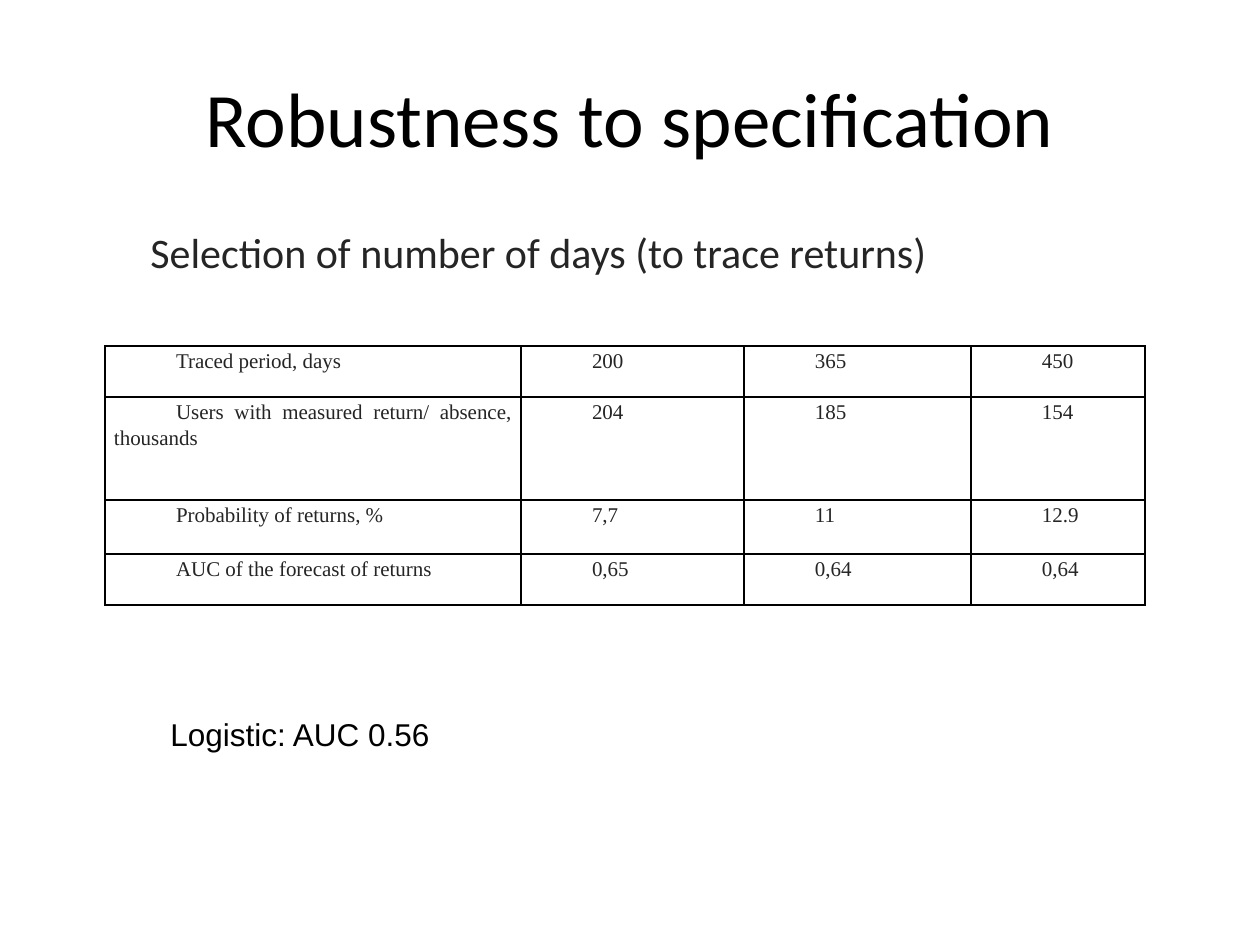
from dataclasses import dataclass

from lxml.etree import SubElement as Sub
from pptx import Presentation
from pptx.dml.color import RGBColor as RGB
from pptx.enum.text import MSO_ANCHOR as Anchor, MSO_AUTO_SIZE as Auto, PP_ALIGN as Align
from pptx.oxml.ns import qn
from pptx.util import Emu, Pt

SCALE = 914400 / 126
INDENT = 62
INSET = 9
COLORS = {"black": "000000", "gray": "252525"}


@dataclass
class Style:
    font: str
    size: int
    color: str
    align: Align = Align.LEFT
    indent: int = INDENT
    space: float = 1.0


@dataclass
class Label:
    text: str
    box: tuple[int, int, int, int]
    style: Style
    wrap: bool = False
    auto: Auto = Auto.SHAPE_TO_FIT_TEXT


LABELS = [
    Label("Robustness to specification", (63, 38, 1134, 158),
          Style("Calibri", 44, "black", Align.CENTER, 0), True, Auto.NONE),
    Label("Selection of number of days (to trace returns)", (76, 220, 872, 63),
          Style("Calibri", 24, "gray")),
    Label("Logistic: AUC 0.56", (96, 709, 350, 50), Style("Arial", 18, "black")),
]

# Table content and grid
CELL = Style("Times New Roman", 12, "gray", Align.JUSTIFY, space=1.15)
ORIGIN = (105, 346)
WIDTHS = [416, 223, 227, 174]
HEIGHTS = [51, 103, 54, 51]
ROWS = [
    ("Traced period, days", "200", "365", "450"),
    ("Users with measured return/ absence, thousands", "204", "185", "154"),
    ("Probability of returns, %", "7,7", "11", "12.9"),
    ("AUC of the forecast of returns", "0,65", "0,64", "0,64"),
]


def px(num: int) -> Emu:
    return Emu(round(num * SCALE))


def assign(obj, values: dict) -> None:
    for name, value in values.items():
        setattr(obj, name, value)


def write(frame, text: str, style: Style) -> None:
    par = frame.paragraphs[0]
    assign(par, {"alignment": style.align, "line_spacing": style.space})
    if style.indent:
        props = par._p.get_or_add_pPr()
        props.set("marL", "0")
        props.set("indent", str(px(style.indent)))
    run = par.add_run()
    run.text = text
    assign(run.font, {"name": style.font, "size": Pt(style.size), "bold": False})
    run.font.color.rgb = RGB.from_string(COLORS[style.color])


def add_label(slide, label: Label) -> None:
    frame = slide.shapes.add_textbox(*map(px, label.box)).text_frame
    assign(frame, {"word_wrap": label.wrap, "auto_size": label.auto,
                   "vertical_anchor": Anchor.MIDDLE})
    write(frame, label.text, label.style)


def add_lines(cell) -> None:
    props = cell._tc.get_or_add_tcPr()
    for side in "LRTB":
        line = Sub(props, qn(f"a:ln{side}"), w=str(Pt(1)))
        fill = Sub(line, qn("a:solidFill"))
        Sub(fill, qn("a:srgbClr"), val=COLORS["black"])


def add_grid(slide) -> None:
    box = (*ORIGIN, sum(WIDTHS), sum(HEIGHTS))
    table = slide.shapes.add_table(len(ROWS), len(WIDTHS), *map(px, box)).table
    assign(table, {"first_row": False, "horz_banding": False})
    for col, width in zip(table.columns, WIDTHS):
        col.width = px(width)
    for row, height, texts in zip(table.rows, HEIGHTS, ROWS):
        row.height = px(height)
        for cell, text in zip(row.cells, texts):
            assign(cell, {"margin_left": px(INSET), "margin_right": px(INSET),
                          "margin_top": 0, "margin_bottom": 0})
            add_lines(cell)
            cell.fill.background()
            write(cell.text_frame, text, CELL)


def main() -> None:
    deck = Presentation()
    assign(deck, {"slide_width": px(1260), "slide_height": px(945)})
    slide = deck.slides.add_slide(deck.slide_layouts[6])
    # Title, table, then the two notes
    title, *notes = LABELS
    add_label(slide, title)
    add_grid(slide)
    for note in notes:
        add_label(slide, note)
    deck.save("out.pptx")


if __name__ == "__main__":
    main()
